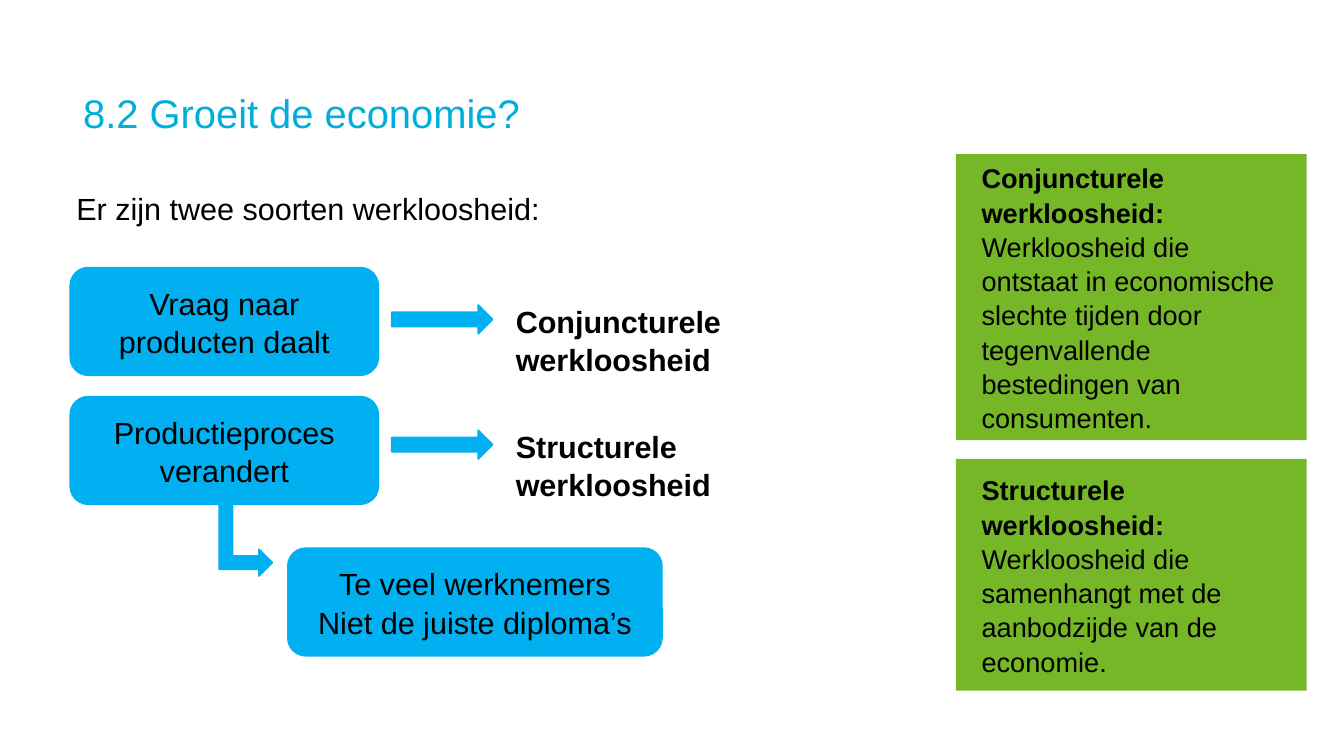
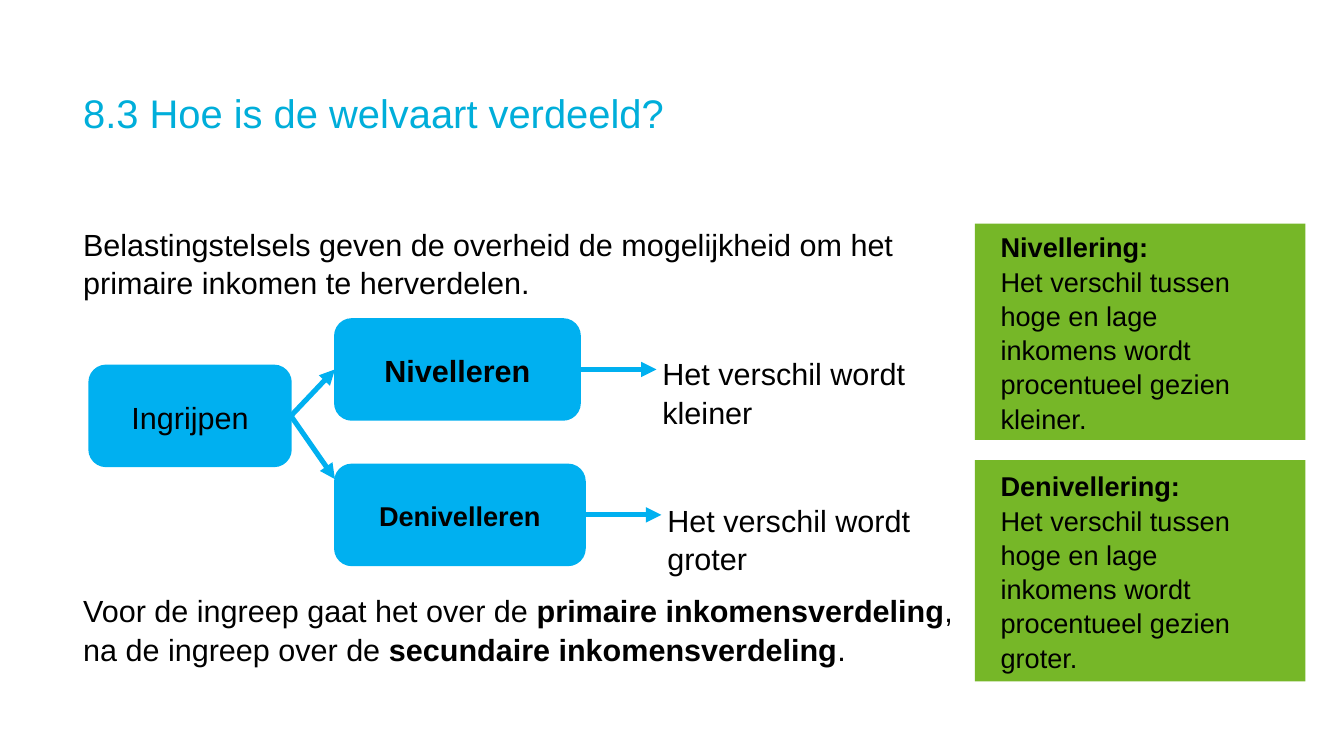
import dataclasses
import pptx
import pptx.util
import pptx.dml.color
import pptx.enum.shapes
import pptx.enum.text
import pptx.oxml
import pptx.oxml.ns

Inches = pptx.util.Inches
Kind = pptx.enum.shapes.MSO_SHAPE
Align = pptx.enum.text.PP_ALIGN
Anchor = pptx.enum.text.MSO_ANCHOR


@dataclasses.dataclass(frozen=True)
class Theme:
    font: str = "Arial"
    title: str = "00AEDA"
    blue: str = "00B0F0"
    green: str = "76B728"
    ink: str = "000000"
    head: int = 47
    text: int = 36
    small: int = 32
    lead: float = 1.05
    edge: int = 2
    wire: int = 6


THEME = Theme()


def rgb(code):
    return pptx.dml.color.RGBColor.from_string(code)


def style(font, size, color, bold):
    font.name = THEME.font
    font.size = pptx.util.Pt(size)
    font.color.rgb = rgb(color)
    font.bold = bold


def write(shape, paras, size=THEME.text, color=THEME.ink, align=Align.LEFT,
          anchor=Anchor.TOP, pad=(0.1, 0.05)):
    frame = shape.text_frame
    frame.word_wrap = True
    frame.vertical_anchor = anchor
    frame.margin_left = frame.margin_right = Inches(pad[0])
    frame.margin_top = frame.margin_bottom = Inches(pad[1])
    for i, runs in enumerate(paras):
        para = frame.paragraphs[0] if i == 0 else frame.add_paragraph()
        para.alignment = align
        para.line_spacing = THEME.lead
        same = len({bold for _, bold in runs}) == 1
        style(para.font, size, color, runs[0][1] if same else None)
        for words, bold in runs:
            run = para.add_run()
            run.text = words
            if not same:
                run.font.bold = bold


def label(slide, box, runs, **look):
    shape = slide.shapes.add_textbox(*map(Inches, box))
    write(shape, [runs], **look)


def title(slide, words):
    label(slide, (1.36, 1.36, 19.25, 0.91), [(words, False)],
          size=THEME.head, color=THEME.title, anchor=Anchor.MIDDLE, pad=(0, 0))


def block(slide, kind, box, fill, line=True):
    shape = slide.shapes.add_shape(kind, *map(Inches, box))
    shape.shadow.inherit = False
    shape.fill.solid()
    shape.fill.fore_color.rgb = rgb(fill)
    if line:
        shape.line.color.rgb = rgb(fill)
        shape.line.width = pptx.util.Pt(THEME.edge)
    else:
        shape.line.fill.background()
    return shape


def node(slide, box, *lines, bold=False, size=THEME.text):
    shape = block(slide, Kind.ROUNDED_RECTANGLE, box, THEME.blue)
    write(shape, [[(words, bold)] for words in lines], size=size,
          align=Align.CENTER, anchor=Anchor.MIDDLE)
    return shape


def define(slide, box, term, words):
    shape = block(slide, Kind.RECTANGLE, box, THEME.green, line=False)
    write(shape, [[(term, True)], [(words, False)]], size=THEME.small,
          anchor=Anchor.MIDDLE, pad=(0.42, 0.1))


def arrow(slide, start, end=None, goal=None):
    spot = (goal.left, goal.top) if goal else tuple(map(Inches, end))
    line = slide.shapes.add_connector(
        pptx.enum.shapes.MSO_CONNECTOR.STRAIGHT,
        start.left + start.width, start.top + start.height // 2, *spot)
    line.begin_connect(start, 3)
    if goal:
        line.end_connect(goal, 1)
    line.line.color.rgb = rgb(THEME.blue)
    line.line.width = pptx.util.Pt(THEME.wire)
    space = pptx.oxml.ns.nsdecls("a")
    tip = pptx.oxml.parse_xml(f'<a:tailEnd {space} type="triangle"/>')
    line.line._get_or_add_ln().append(tip)
    flat = pptx.oxml.parse_xml(f"<a:effectLst {space}/>")
    line._element.spPr.append(flat)


def growth(slide):
    title(slide, "8.2 Groeit de economie?")
    label(slide, (1.15, 3.03, 13.94, 0.71),
          [("Er zijn twee soorten werkloosheid:", False)])
    rows = [
        (4.38, 4.99, "Vraag naar producten daalt", "Conjuncturele werkloosheid"),
        (6.49, 7.04, "Productieproces verandert", "Structurele werkloosheid"),
    ]
    for top, mark, cause, sort in rows:
        node(slide, (1.15, top, 5.04, 1.76), cause)
        block(slide, Kind.RIGHT_ARROW, (6.41, mark, 1.65, 0.47), THEME.blue)
        label(slide, (8.34, mark - 0.12, 4.88, 1.31), [(sort, True)])
    node(slide, (4.71, 8.97, 6.12, 1.76),
         "Te veel werknemers", "Niet de juiste diploma’s")
    bend = block(slide, Kind.BENT_UP_ARROW, (3.43, 8.4, 1.18, 0.87), THEME.blue)
    bend.rotation = 90
    define(slide, (15.64, 2.52, 5.74, 4.68), "Conjuncturele werkloosheid:",
           "Werkloosheid die ontstaat in economische slechte tijden door "
           "tegenvallende bestedingen van consumenten.")
    define(slide, (15.64, 7.51, 5.74, 3.79), "Structurele werkloosheid:",
           "Werkloosheid die samenhangt met de aanbodzijde van de economie.")


def wealth(slide):
    title(slide, "8.3 Hoe is de welvaart verdeeld?")
    label(slide, (1.36, 3.66, 14.35, 1.21),
          [("Belastingstelsels geven de overheid de mogelijkheid om het "
            "primaire inkomen te herverdelen.", False)], pad=(0, 0))
    label(slide, (1.36, 9.66, 14.35, 1.21),
          [("Voor de ingreep gaat het over de ", False),
           ("primaire inkomensverdeling", True),
           (", na de ingreep over de ", False),
           ("secundaire inkomensverdeling", True),
           (".", False)], pad=(0, 0))
    act = node(slide, (1.46, 5.98, 3.3, 1.65), "Ingrijpen")
    less = node(slide, (5.48, 5.22, 4.01, 1.65), "Nivelleren", bold=True)
    more = node(slide, (5.48, 7.6, 4.09, 1.65), "Denivelleren", bold=True,
                size=THEME.small)
    arrow(slide, act, goal=less)
    arrow(slide, act, end=(5.48, 7.84))
    sides = [
        (less, 10.74, 5.73, 3.66, 3.54, "Nivellering:", "kleiner"),
        (more, 10.82, 8.13, 7.53, 3.62, "Denivellering:", "groter"),
    ]
    for start, left, top, high, tall, term, trend in sides:
        mid = (start.top + start.height // 2) / Inches(1)
        arrow(slide, start, end=(left, mid))
        label(slide, (left, top, 5.2, 1.31),
              [(f"Het verschil wordt {trend}", False)])
        define(slide, (15.95, high, 5.41, tall), term,
               "Het verschil tussen hoge en lage inkomens wordt procentueel "
               f"gezien {trend}.")


def main():
    deck = pptx.Presentation()
    deck.slide_width = Inches(21.99)
    deck.slide_height = Inches(12.37)
    for build in (growth, wealth):
        build(deck.slides.add_slide(deck.slide_layouts[6]))
    deck.save("out.pptx")


if __name__ == "__main__":
    main()
